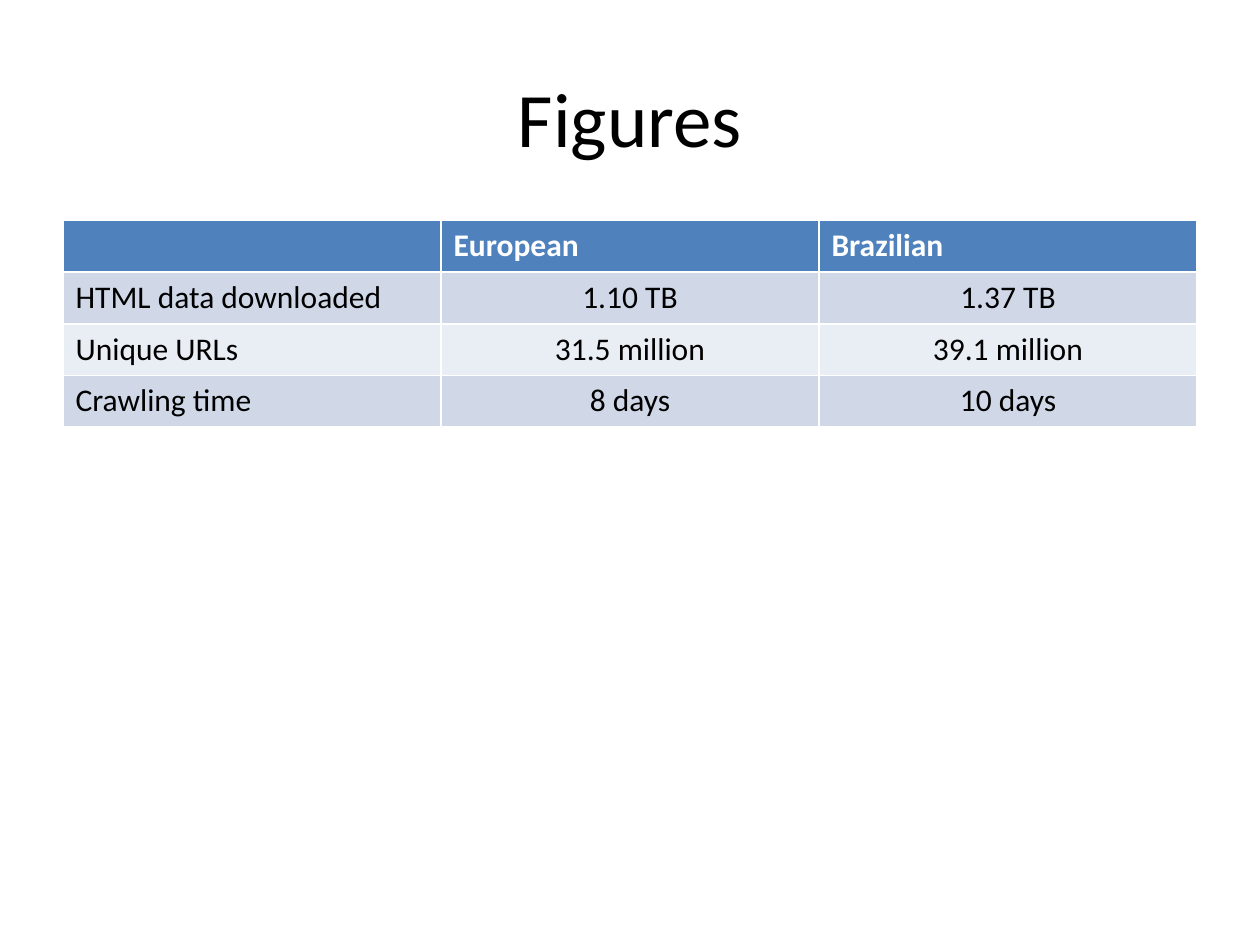
from pptx import Presentation
from pptx.dml import color
from pptx.enum import text
from pptx.util import Inches, Pt

FONT = "Calibri"
HEADER_FILL = "4F81BD"
BAND_FILLS = ("D0D8E8", "E9EDF4")
ROWS = (
    ("", "European", "Brazilian"),
    ("HTML data downloaded", "1.10 TB", "1.37 TB"),
    ("Unique URLs", "31.5 million", "39.1 million"),
    ("Crawling time", "8 days", "10 days"),
)
COLUMN_WIDTH = 3
ROW_HEIGHT = 0.41


def rgb(value):
    """Return the colour for a hex string."""
    return color.RGBColor.from_string(value)


def format_text(text_frame, size, hex_color, alignment, bold=False):
    """Format every paragraph and run of a text frame."""
    for paragraph in text_frame.paragraphs:
        paragraph.alignment = alignment
        for run in paragraph.runs:
            run.font.name = FONT
            run.font.size = Pt(size)
            run.font.bold = bold
            run.font.color.rgb = rgb(hex_color)


def add_title(slide, wording):
    """Place and format the slide title."""
    title = slide.shapes.title
    title.left, title.top = Inches(0.5), Inches(0.3)
    title.width, title.height = Inches(9), Inches(1.25)
    title.text_frame.text = wording
    title.text_frame.vertical_anchor = text.MSO_ANCHOR.MIDDLE
    format_text(title.text_frame, 44, "000000", text.PP_ALIGN.CENTER)


def fill_cell(cell, wording, row, column):
    """Write one cell with header or banded formatting."""
    header = row == 0
    centred = not header and column > 0
    cell.fill.solid()
    cell.fill.fore_color.rgb = rgb(HEADER_FILL if header else BAND_FILLS[(row - 1) % 2])
    cell.text_frame.text = wording
    alignment = text.PP_ALIGN.CENTER if centred else text.PP_ALIGN.LEFT
    format_text(cell.text_frame, 18, "FFFFFF" if header else "000000", alignment, header)


def add_figures_table(slide, rows):
    """Add the table of crawl figures with equal columns and rows."""
    row_count, column_count = len(rows), len(rows[0])
    table = slide.shapes.add_table(
        row_count, column_count, Inches(0.5), Inches(1.75),
        Inches(COLUMN_WIDTH * column_count), Inches(ROW_HEIGHT * row_count),
    ).table
    for row, values in enumerate(rows):
        for column, wording in enumerate(values):
            fill_cell(table.cell(row, column), wording, row, column)


def main():
    """Build and save the slide."""
    presentation = Presentation()
    presentation.slide_width, presentation.slide_height = Inches(10), Inches(7.5)
    slide = presentation.slides.add_slide(presentation.slide_layouts[5])
    add_title(slide, "Figures")
    add_figures_table(slide, ROWS)
    presentation.save("out.pptx")


if __name__ == "__main__":
    main()
